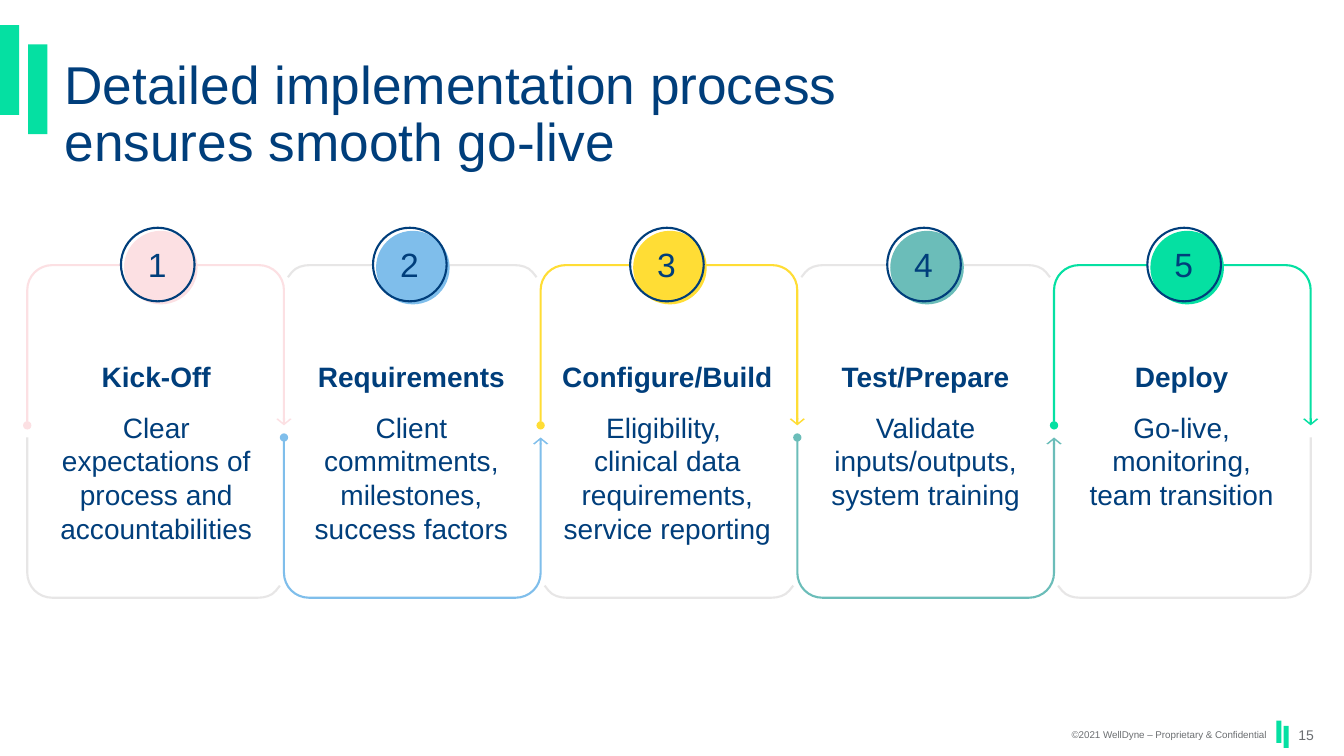
from pptx import Presentation
from pptx.dml.color import RGBColor
from pptx.enum.shapes import MSO_SHAPE
from pptx.enum.text import MSO_ANCHOR, MSO_AUTO_SIZE, PP_ALIGN
from pptx.oxml.ns import qn
from pptx.util import Inches, Pt

RECTANGLE, OVAL = MSO_SHAPE.RECTANGLE, MSO_SHAPE.OVAL
TOP, MIDDLE = MSO_ANCHOR.TOP, MSO_ANCHOR.MIDDLE
LEFT, CENTER, RIGHT = PP_ALIGN.LEFT, PP_ALIGN.CENTER, PP_ALIGN.RIGHT
NO_AUTOFIT = MSO_AUTO_SIZE.NONE

NAVY, GREEN, WHITE = "003E7B", "05E0A2", "FFFFFF"
PALE_GRAY, FOOTER_GRAY = "E7E6E6", "6B6E71"
FONT = "Arial"
BADGE_SIZE = 0.73
LEG = 1.59
FULL_CORNER = [(0, LEG), (0, 0.25), (0, 0.11), (0.11, 0), (0.25, 0)]
CUT_CORNER = [(0.04, 0.12), (0.08, 0.07), (0.12, 0.02), (0.19, 0), (0.26, 0)]
LINE_ENDS = [
    ("a:headEnd", {"type": "oval"}),
    ("a:tailEnd", {"type": "arrow", "w": "lg", "len": "sm"}),
]

STEPS = [
    ("Kick-Off", "Clear expectations of process and accountabilities",
     "FCE0E3", 1.2, 0.44, 2.22),
    ("Requirements", "Client commitments, milestones,\nsuccess factors",
     "7FBEEB", 3.7, 2.97, 2.22),
    ("Configure/Build", "Eligibility, \nclinical data requirements, service reporting",
     "FFDD35", 6.25, 5.39, 2.46),
    ("Test/Prepare", "Validate inputs/outputs, system training",
     "6BBDB9", 8.8, 8.07, 2.22),
    ("Deploy", "Go-live, monitoring, team transition",
     GREEN, 11.38, 10.61, 2.22),
]


def color(hex_value):
    return RGBColor.from_string(hex_value)


def add_run(paragraph, text, size, hex_value, bold=False):
    run = paragraph.add_run()
    run.text = text
    run.font.name = FONT
    run.font.size = Pt(size)
    run.font.bold = bold
    run.font.color.rgb = color(hex_value)


def add_frame(slide, box, anchor=TOP):
    frame = slide.shapes.add_textbox(*map(Inches, box)).text_frame
    frame.word_wrap = True
    frame.vertical_anchor = anchor
    return frame


def add_label(slide, box, text, size, hex_value, align):
    paragraph = add_frame(slide, box, MIDDLE).paragraphs[0]
    paragraph.alignment = align
    add_run(paragraph, text, size, hex_value)


def add_preset(slide, preset, box, fill=None, line=None):
    shape = slide.shapes.add_shape(preset, *map(Inches, box))
    shape.shadow.inherit = False
    if fill:
        shape.fill.solid()
        shape.fill.fore_color.rgb = color(fill)
    else:
        shape.fill.background()
    if line:
        shape.line.color.rgb = color(line)
        shape.line.width = Pt(1.5)
    else:
        shape.line.fill.background()


def add_accent_bars(slide, left, top, width, height, shift_x, shift_y):
    for index in range(2):
        box = (left + index * shift_x, top + index * shift_y, width, height)
        add_preset(slide, RECTANGLE, box, fill=GREEN)


def round_corners(bracket):
    segments = bracket._element.findall(".//" + qn("a:lnTo"))
    for corner in (segments[1:4], segments[5:8]):
        curve = corner[0].makeelement(qn("a:cubicBezTo"), {})
        corner[0].addprevious(curve)
        for segment in corner:
            curve.append(segment[0])
            segment.getparent().remove(segment)


def add_bracket(slide, left, width, edge, inward, hex_value,
                cut_left=False, cut_right=False, arrow=False):
    left_corner = CUT_CORNER if cut_left else FULL_CORNER
    right_corner = CUT_CORNER if cut_right else FULL_CORNER
    points = [(left + x, edge + inward * y) for x, y in left_corner]
    points += [(left + width - x, edge + inward * y) for x, y in reversed(right_corner)]
    points = [(Inches(x), Inches(y)) for x, y in points]
    builder = slide.shapes.build_freeform(*points[0])
    builder.add_line_segments(points[1:], close=False)
    bracket = builder.convert_to_shape()
    round_corners(bracket)
    bracket.shadow.inherit = False
    bracket.fill.background()
    bracket.line.color.rgb = color(hex_value)
    bracket.line.width = Pt(1.5)
    if arrow:
        outline = bracket.line._get_or_add_ln()
        for tag, attributes in LINE_ENDS:
            outline.append(outline.makeelement(qn(tag), attributes))


def add_badge(slide, left, top, number, hex_value):
    size = (BADGE_SIZE, BADGE_SIZE)
    add_preset(slide, OVAL, (left, top - 0.01, *size), fill=WHITE)
    add_preset(slide, OVAL, (left + 0.03, top + 0.03, *size), fill=hex_value)
    add_preset(slide, OVAL, (left, top, *size), line=NAVY)
    add_label(slide, (left + 0.1, top + 0.1, 0.52, 0.51),
              str(number), 24, NAVY, CENTER)


def add_step_text(slide, box, heading, description):
    frame = add_frame(slide, box)
    title = frame.paragraphs[0]
    title.alignment = CENTER
    add_run(title, heading, 20, NAVY, bold=True)
    body = frame.add_paragraph()
    body.alignment = CENTER
    body.space_before = Pt(12)
    for index, part in enumerate(description.split("\n")):
        if index:
            body.add_line_break()
        add_run(body, part, 20, NAVY)


def add_process(slide, left, top, width, height):
    pitch = width / len(STEPS)
    upper, lower = (top, 1), (top + height, -1)
    last = len(STEPS) - 1
    for index, step in enumerate(STEPS):
        heading, description, hue, badge_left, text_left, text_width = step
        step_left = left + index * pitch
        bright, faint = (lower, upper) if index % 2 else (upper, lower)
        add_bracket(slide, step_left, pitch, *bright, hue, arrow=True)
        add_bracket(slide, step_left, pitch, *faint, PALE_GRAY,
                    cut_left=index > 0, cut_right=index < last)
        add_badge(slide, badge_left, top - 0.37, index + 1, hue)
        add_step_text(slide, (text_left, top + 0.89, text_width, 2.19),
                      heading, description)


def add_title(slide, box):
    title = slide.shapes.title
    title.left, title.top, title.width, title.height = map(Inches, box)
    frame = title.text_frame
    frame.word_wrap = True
    frame.auto_size = NO_AUTOFIT
    frame.vertical_anchor = TOP
    paragraph = frame.paragraphs[0]
    paragraph.alignment = LEFT
    paragraph.line_spacing = 0.9
    add_run(paragraph, "Detailed implementation process ensures smooth go-live", 38, NAVY)


def add_footer(slide, left, top):
    add_label(slide, (left, top, 3.36, 0.4),
              "©2021 WellDyne – Proprietary & Confidential", 7, FOOTER_GRAY, RIGHT)
    add_accent_bars(slide, left + 3.36, top + 0.06, 0.05, 0.22, 0.07, 0.05)
    add_label(slide, (left + 3.48, top, 0.45, 0.4), "15", 10, FOOTER_GRAY, LEFT)


def main():
    presentation = Presentation()
    presentation.slide_width = Inches(13.33)
    presentation.slide_height = Inches(7.5)
    slide = presentation.slides.add_slide(presentation.slide_layouts[5])
    add_accent_bars(slide, 0, 0.25, 0.19, 0.89, 0.28, 0.19)
    add_title(slide, (0.54, 0.53, 9.46, 0.89))
    add_process(slide, 0.27, 2.63, 12.73, 3.3)
    add_footer(slide, 9.3, 7.09)
    presentation.save("out.pptx")


if __name__ == "__main__":
    main()
